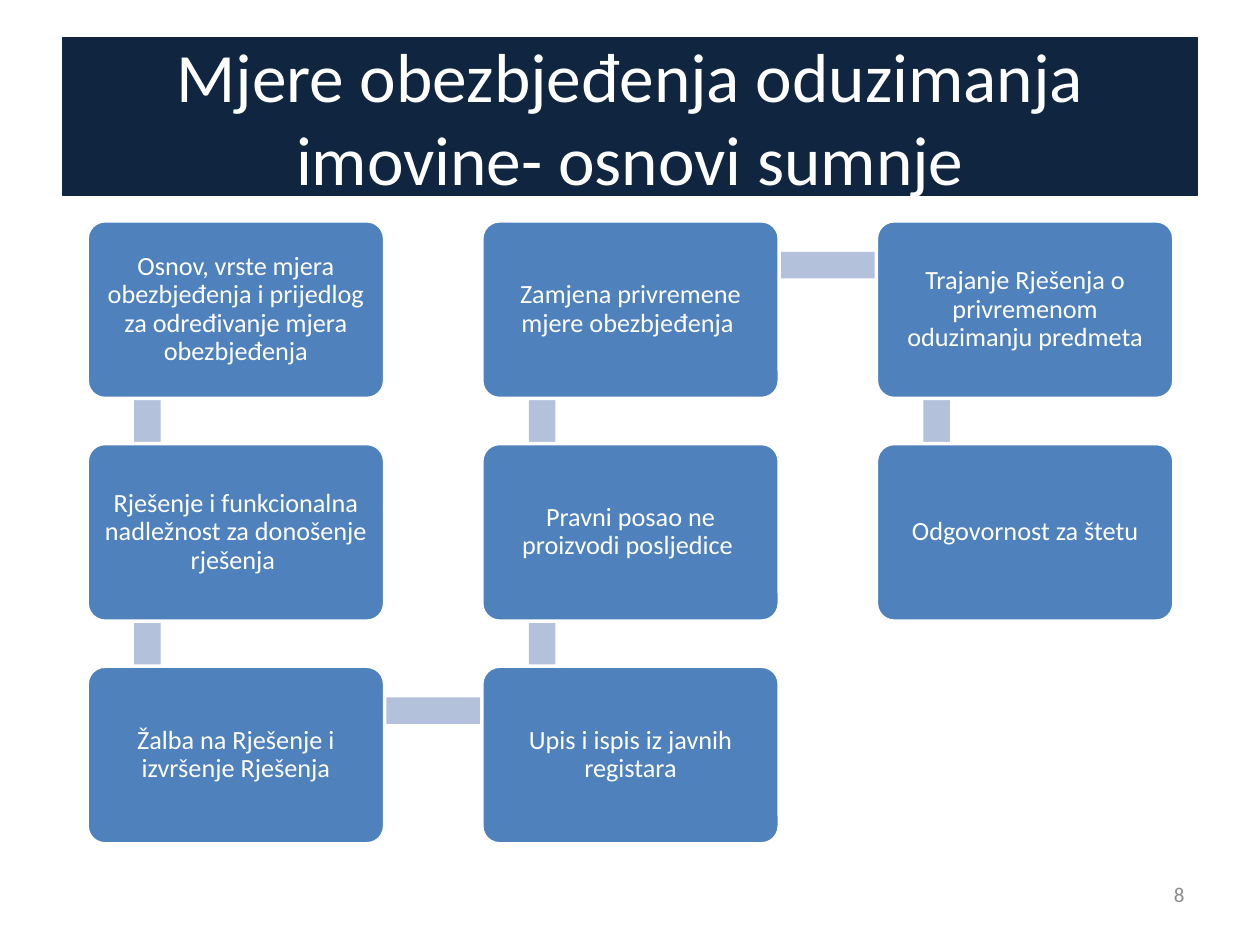
import pptx
import pptx.dml.color
import pptx.enum.shapes
import pptx.enum.text
import pptx.util

Pt = pptx.util.Pt
MIDDLE = pptx.enum.text.MSO_ANCHOR.MIDDLE
ALIGN = pptx.enum.text.PP_ALIGN
SHAPES = pptx.enum.shapes.MSO_SHAPE

COLORS = {
    "navy": "10253F",
    "step": "4F81BD",
    "link": "B3C1DB",
    "white": "FFFFFF",
    "number": "8C8C8C",
}
FONT = "Calibri"
STEPS = [
    "Osnov, vrste mjera obezbjeđenja i prijedlog za određivanje mjera obezbjeđenja",
    "Rješenje i funkcionalna nadležnost za donošenje rješenja ",
    "Žalba na Rješenje i izvršenje Rješenja",
    "Upis i ispis iz javnih registara",
    "Pravni posao ne proizvodi posljedice ",
    "Zamjena privremene mjere obezbjeđenja ",
    "Trajanje Rješenja o privremenom oduzimanju predmeta",
    "Odgovornost za štetu",
]
ROWS = 3
COLUMNS = 3
STEP_WIDTH, STEP_HEIGHT = 170, 101.5
LINK_THICKNESS = 15.2
LINK_OFFSET_X, LINK_OFFSET_Y = 34.5, 25.4


def color(name):
    return pptx.dml.color.RGBColor.from_string(COLORS[name])


def write(shape, text, size, color_name, alignment):
    frame = shape.text_frame
    frame.text = text
    frame.word_wrap = True
    frame.auto_size = pptx.enum.text.MSO_AUTO_SIZE.NONE
    frame.vertical_anchor = MIDDLE
    paragraph = frame.paragraphs[0]
    paragraph.alignment = alignment
    font = paragraph.runs[0].font
    font.name = FONT
    font.size = Pt(size)
    font.color.rgb = color(color_name)


def fill(shape, color_name):
    shape.fill.solid()
    shape.fill.fore_color.rgb = color(color_name)


def add_title(slide, left, top, width, height):
    title = slide.shapes.title
    title.left, title.top = Pt(left), Pt(top)
    title.width, title.height = Pt(width), Pt(height)
    fill(title, "navy")
    title.line.color.rgb = color("navy")
    title.line.width = Pt(0.75)
    write(title, "Mjere obezbjeđenja oduzimanja imovine- osnovi sumnje",
          39.6, "white", ALIGN.CENTER)


def add_link(slide, start, end):
    """Draw a bar between the link points of two neighbouring steps."""
    (start_x, start_y), (end_x, end_y) = start, end
    length = abs(end_x - start_x) + abs(end_y - start_y)
    half = LINK_THICKNESS / 2
    left = min(start_x, end_x) + LINK_OFFSET_X
    top = min(start_y, end_y) + LINK_OFFSET_Y
    if start_x == end_x:
        box = left - half, top, LINK_THICKNESS, length
    else:
        box = left, top - half, length, LINK_THICKNESS
    link = slide.shapes.add_shape(SHAPES.RECTANGLE, *map(Pt, box))
    link.shadow.inherit = False
    fill(link, "link")
    link.line.fill.background()


def add_step(slide, left, top, text):
    step = slide.shapes.add_shape(
        SHAPES.ROUNDED_RECTANGLE, Pt(left), Pt(top), Pt(STEP_WIDTH), Pt(STEP_HEIGHT))
    step.adjustments[0] = 0.1
    step.shadow.inherit = False
    fill(step, "step")
    step.line.color.rgb = color("white")
    step.line.width = Pt(2)
    write(step, text, 15, "white", ALIGN.CENTER)
    frame = step.text_frame
    frame.margin_left = frame.margin_right = Pt(4.4)
    frame.margin_top = frame.margin_bottom = Pt(4.4)
    frame.paragraphs[0].line_spacing = 0.9


def add_process(slide, left, top, width, height):
    """Lay the steps out in columns that run down and up in turn."""
    column_pitch = (width - STEP_WIDTH) / (COLUMNS - 1)
    row_pitch = (height - STEP_HEIGHT) / (ROWS - 1)
    corners = []
    for index in range(len(STEPS)):
        column, row = divmod(index, ROWS)
        if column % 2:
            row = ROWS - 1 - row
        corners.append((left + column * column_pitch, top + row * row_pitch))
    for start, end in zip(corners, corners[1:]):
        add_link(slide, start, end)
    for corner, text in zip(corners, STEPS):
        add_step(slide, *corner, text)


def add_slide_number(slide, left, top, width, height):
    number = slide.shapes.add_textbox(Pt(left), Pt(top), Pt(width), Pt(height))
    write(number, "8", 12, "number", ALIGN.RIGHT)


def main():
    presentation = pptx.Presentation()
    presentation.slide_width, presentation.slide_height = Pt(720), Pt(540)
    slide = presentation.slides.add_slide(presentation.slide_layouts[5])
    add_slide_number(slide, 516, 496.8, 168, 28.8)
    add_title(slide, 36, 21.6, 648, 90)
    add_process(slide, 49.8, 126.2, 621, 356)
    presentation.save("out.pptx")


if __name__ == "__main__":
    main()
